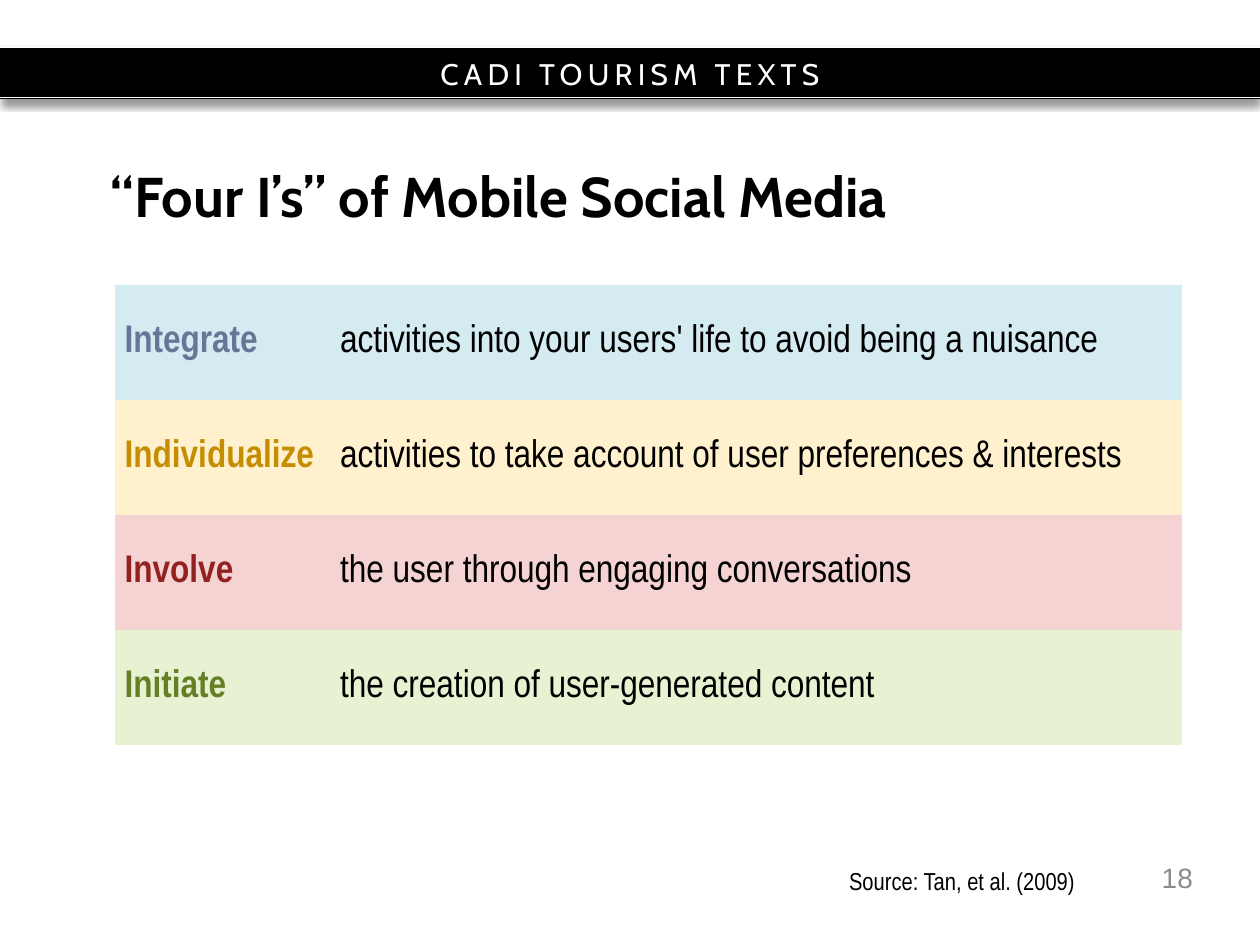
from dataclasses import dataclass

from lxml.etree import SubElement
from pptx import Presentation
from pptx.dml.color import RGBColor
from pptx.enum.shapes import MSO_CONNECTOR, MSO_SHAPE
from pptx.enum.text import MSO_ANCHOR as Anchor, MSO_AUTO_SIZE as AutoSize, PP_ALIGN as Align
from pptx.oxml.ns import qn
from pptx.util import Inches, Pt

COLUMNS, ROWS = 100, 75  # slide grid
SLIDE_WIDTH, SLIDE_HEIGHT = Inches(10), Inches(7.5)
PLAIN_TABLE_STYLE = "{2D5ABB26-0587-4C30-8999-92F81FD0307C}"


@dataclass(frozen=True)
class Theme:
    black: str = "000000"
    white: str = "FFFFFF"
    grey: str = "8C8C8C"
    heading_font: str = "Cabin"
    body_font: str = "Arial Narrow"
    number_font: str = "Arial"
    title_size: int = 32
    table_size: int = 22
    banner_size: int = 17
    number_size: int = 16
    source_size: int = 14


THEME = Theme()

# Term, description, term colour, row fill
FOUR_IS = [
    ("Integrate", "activities into your users' life to avoid being a nuisance", "657797", "D4EBF1"),
    ("Individualize", "activities to take account of user preferences & interests", "C58D01", "FFF1CE"),
    ("Involve", "the user through engaging conversations", "922222", "F5D3D3"),
    ("Initiate", "the creation of user-generated content", "638026", "E8F2D3"),
]


@dataclass(frozen=True)
class Box:
    """A region measured in grid columns and rows."""
    column: float
    row: float
    columns: float
    rows: float

    def emu(self):
        return (across(self.column), down(self.row), across(self.columns), down(self.rows))


def across(columns):
    return round(SLIDE_WIDTH * columns / COLUMNS)


def down(rows):
    return round(SLIDE_HEIGHT * rows / ROWS)


def apply(target, values):
    for name, value in values.items():
        setattr(target, name, value)


def write(frame, text, font, size, color, bold=False, **paragraph_format):
    paragraph = frame.paragraphs[0]
    apply(paragraph, paragraph_format)
    run = paragraph.add_run()
    run.text = text
    apply(run.font, {"name": font, "size": Pt(size), "bold": bold})
    run.font.color.rgb = RGBColor.from_string(color)
    return run


def add_shadow(shape):
    effects = SubElement(shape._element.spPr, qn("a:effectLst"))
    shadow = SubElement(effects, qn("a:outerShdw"), blurRad=str(Pt(4)), dist=str(Pt(3)),
                        dir="5400000", algn="ctr", rotWithShape="0")
    color = SubElement(shadow, qn("a:srgbClr"), val=THEME.black)
    SubElement(color, qn("a:alpha"), val="40000")


def add_banner(slide, box, text):
    left, top, width, height = box.emu()
    # Black band
    band = slide.shapes.add_shape(MSO_SHAPE.RECTANGLE, left, top, width, height)
    band.fill.solid()
    band.fill.fore_color.rgb = RGBColor.from_string(THEME.black)
    band.line.fill.background()
    add_shadow(band)
    band.text_frame.vertical_anchor = Anchor.MIDDLE
    run = write(band.text_frame, text, THEME.heading_font, THEME.banner_size, THEME.white,
                alignment=Align.CENTER)
    run.font._element.set("spc", "300")
    # White edges
    for edge in (top, top + down(4)):
        line = slide.shapes.add_connector(MSO_CONNECTOR.STRAIGHT, left, edge, left + width, edge)
        line.line.color.rgb = RGBColor.from_string(THEME.white)
        line.line.width = Pt(0.75)
        SubElement(line._element.spPr, qn("a:effectLst"))


def place_title(slide, box, text):
    title = slide.shapes.title
    apply(title, dict(zip(("left", "top", "width", "height"), box.emu())))
    apply(title.text_frame, {"vertical_anchor": Anchor.MIDDLE, "word_wrap": True,
                             "auto_size": AutoSize.NONE})
    write(title.text_frame, text, THEME.heading_font, THEME.title_size, THEME.black, bold=True,
          alignment=Align.LEFT, line_spacing=Pt(THEME.title_size))


def add_terms_table(slide, box, entries, term_columns):
    table = slide.shapes.add_table(len(entries), 2, *box.emu()).table
    apply(table, {"first_row": False, "horz_banding": False})
    table._tbl.tblPr.find(qn("a:tableStyleId")).text = PLAIN_TABLE_STYLE
    for column, share in zip(table.columns, (term_columns, box.columns - term_columns)):
        column.width = across(share)
    for row, (term, description, term_color, fill) in zip(table.rows, entries):
        row.height = down(box.rows / len(entries))
        contents = ((term, term_color, True), (description, THEME.black, False))
        for cell, (text, color, bold) in zip(row.cells, contents):
            apply(cell, {"vertical_anchor": Anchor.MIDDLE,
                         "margin_left": across(0.75), "margin_right": across(0.75),
                         "margin_top": 0, "margin_bottom": 0})
            cell.fill.solid()
            cell.fill.fore_color.rgb = RGBColor.from_string(fill)
            write(cell.text_frame, text, THEME.body_font, THEME.table_size, color, bold,
                  space_after=Pt(6))


def add_page_number(slide, box, number):
    frame = slide.shapes.add_textbox(*box.emu()).text_frame
    apply(frame, {"word_wrap": True, "vertical_anchor": Anchor.MIDDLE})
    write(frame, number, THEME.number_font, THEME.number_size, THEME.grey, alignment=Align.RIGHT)


def add_source(slide, box, text):
    frame = slide.shapes.add_textbox(*box.emu()).text_frame
    apply(frame, {"word_wrap": False, "auto_size": AutoSize.SHAPE_TO_FIT_TEXT})
    write(frame, text, THEME.body_font, THEME.source_size, THEME.black)


def main():
    presentation = Presentation()
    apply(presentation, {"slide_width": SLIDE_WIDTH, "slide_height": SLIDE_HEIGHT})
    slide = presentation.slides.add_slide(presentation.slide_layouts.get_by_name("Title Only"))
    add_banner(slide, Box(0, 3.75, COLUMNS, 4.1), "CADI TOURISM TEXTS")
    add_terms_table(slide, Box(9.15, 22.6, 84.7, 36.56), FOUR_IS, term_columns=17.1)
    place_title(slide, Box(7.8, 13.5, 85.3, 4.8), "“Four I’s” of Mobile Social Media")
    add_page_number(slide, Box(72.35, 67.65, 23.3, 4), "18")
    add_source(slide, Box(66.4, 68.25, 20.1, 3.4), "Source: Tan, et al. (2009)")
    presentation.save("out.pptx")


if __name__ == "__main__":
    main()
